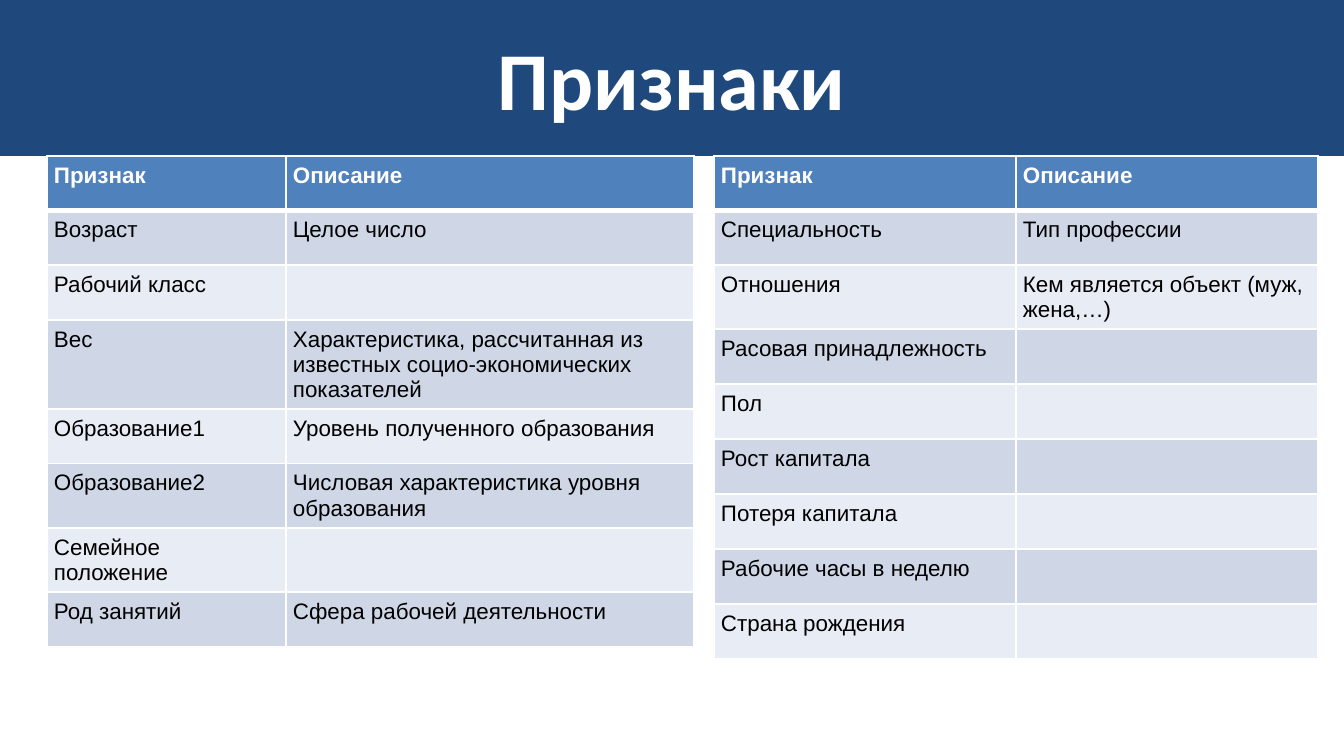
from lxml.etree import SubElement
from pptx import Presentation
from pptx.dml.color import RGBColor
from pptx.enum.text import MSO_ANCHOR, MSO_AUTO_SIZE, PP_ALIGN
from pptx.oxml.ns import qn
from pptx.util import Pt

TITLE = "Признаки"
HEADER = ("Признак", "Описание")
TABLES = [
    {
        "left": 47,
        "columns": (239, 408),
        "rows": [
            ("Возраст", "Целое число"),
            ("Рабочий класс", ""),
            ("Вес", "Характеристика, рассчитанная из известных "
                    "социо-экономических показателей"),
            ("Образование1", "Уровень полученного образования"),
            ("Образование2", "Числовая характеристика уровня образования"),
            ("Семейное положение", ""),
            ("Род занятий", "Сфера рабочей деятельности"),
        ],
    },
    {
        "left": 714,
        "columns": (302, 302),
        "rows": [
            ("Специальность", "Тип профессии"),
            ("Отношения", "Кем является объект (муж, жена,…)"),
            ("Расовая принадлежность", ""),
            ("Пол", ""),
            ("Рост капитала", ""),
            ("Потеря капитала", ""),
            ("Рабочие часы в неделю", ""),
            ("Страна рождения", ""),
        ],
    },
]

THEME = {
    "banner": "1F497D",
    "header_fill": "4F81BD",
    "bands": ("CFD7E7", "E8ECF4"),
    "border": "FFFFFF",
    "thin": 1,
    "thick": 3,
    "title": {"name": "Calibri", "size": 44, "bold": True, "color": "FFFFFF"},
    "header": {"name": "Arial", "size": 12, "bold": True, "color": "FFFFFF"},
    "body": {"name": "Arial", "size": 12, "bold": False, "color": "000000"},
}

SLIDE_WIDTH, SLIDE_HEIGHT = 1344, 756
BANNER_HEIGHT = 156
EIGHT_ROWS_HEIGHT = 436
INSET = 7
EMU_PER_PX = 914400 / 134.4


def px(value):
    return round(value * EMU_PER_PX)


def set_fill(target, color):
    target.fill.solid()
    target.fill.fore_color.rgb = RGBColor.from_string(color)


def set_margins(target):
    for side in ("left", "top", "right", "bottom"):
        setattr(target, f"margin_{side}", px(INSET))


def write(text_frame, text, style):
    run = text_frame.paragraphs[0].add_run()
    run.text = text
    values = {**style, "size": Pt(style["size"])}
    run.font.color.rgb = RGBColor.from_string(values.pop("color"))
    for name, value in values.items():
        setattr(run.font, name, value)


def set_borders(cell, widths):
    """Draw the cell edges, given as left, right, top and bottom in points."""
    properties = cell._tc.get_or_add_tcPr()
    for tag, width in zip(("a:lnL", "a:lnR", "a:lnT", "a:lnB"), widths):
        line = SubElement(properties, qn(tag), w=str(Pt(width)))
        fill = SubElement(line, qn("a:solidFill"))
        SubElement(fill, qn("a:srgbClr"), val=THEME["border"])


def add_title(slide):
    title = slide.shapes.title
    box = {"left": 0, "top": 0, "width": SLIDE_WIDTH, "height": BANNER_HEIGHT}
    for name, value in box.items():
        setattr(title, name, px(value))
    set_fill(title, THEME["banner"])
    frame = title.text_frame
    frame.auto_size = MSO_AUTO_SIZE.NONE
    frame.vertical_anchor = MSO_ANCHOR.MIDDLE
    frame.paragraphs[0].alignment = PP_ALIGN.CENTER
    set_margins(frame)
    write(frame, TITLE, THEME["title"])


def format_cell(cell, text, row_index):
    thin, thick = THEME["thin"], THEME["thick"]
    is_header = row_index == 0
    top = thick if row_index == 1 else thin
    bottom = thick if is_header else thin
    set_borders(cell, (thin, thin, top, bottom))
    bands = THEME["bands"]
    band = bands[(row_index - 1) % len(bands)]
    set_fill(cell, THEME["header_fill"] if is_header else band)
    set_margins(cell)
    if text:
        write(cell.text_frame, text, THEME["header" if is_header else "body"])


def add_feature_table(slide, left, columns, rows):
    rows = [HEADER, *rows]
    row_height = px(EIGHT_ROWS_HEIGHT) // 8
    table = slide.shapes.add_table(
        len(rows), len(columns), px(left), px(BANNER_HEIGHT),
        px(sum(columns)), row_height * len(rows),
    ).table
    for column, width in zip(table.columns, columns):
        column.width = px(width)
    for row_index, texts in enumerate(rows):
        table.rows[row_index].height = row_height
        for column_index, text in enumerate(texts):
            format_cell(table.cell(row_index, column_index), text, row_index)


def main():
    presentation = Presentation()
    presentation.slide_width = px(SLIDE_WIDTH)
    presentation.slide_height = px(SLIDE_HEIGHT)
    title_only = presentation.slide_layouts[5]
    slide = presentation.slides.add_slide(title_only)
    add_title(slide)
    for table in TABLES:
        add_feature_table(slide, **table)
    presentation.save("out.pptx")


if __name__ == "__main__":
    main()
